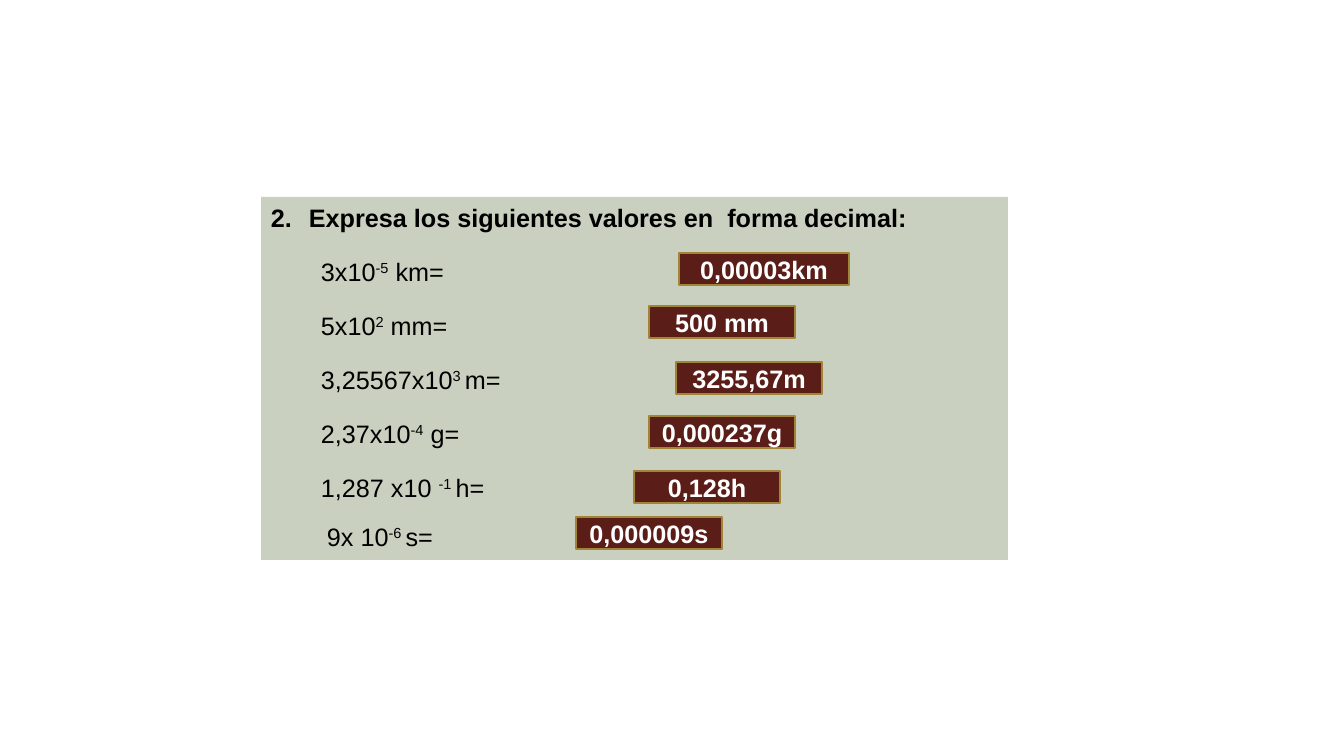
from dataclasses import dataclass

from lxml import etree
from pptx import Presentation
from pptx.dml.color import RGBColor
from pptx.enum.shapes import MSO_SHAPE
from pptx.enum.text import MSO_ANCHOR, PP_ALIGN
from pptx.oxml.ns import qn
from pptx.util import Emu, Pt

RECTANGLE = MSO_SHAPE.RECTANGLE
TOP, MIDDLE = MSO_ANCHOR.TOP, MSO_ANCHOR.MIDDLE
JUSTIFY, LEFT, CENTER = PP_ALIGN.JUSTIFY, PP_ALIGN.LEFT, PP_ALIGN.CENTER

# Content
QUESTION_NUMBER = 2
QUESTION = "Expresa los siguientes valores en  forma decimal:"
# (base, exponent, unit)
EXERCISES = [
    ("3x10", "-5", " km="),
    ("5x10", "2", " mm="),
    ("3,25567x10", "3 ", "m="),
    ("2,37x10", "-4", " g="),
    ("1,287 x10 ", "-1 ", "h="),
    ("9x 10", "-6 ", "s="),
]
# (answer, left, top, width) in px
ANSWERS = [
    ("0,00003km", 679, 253, 170),
    ("500 mm", 649, 306, 146),
    ("3255,67m", 676, 362, 146),
    ("0,000237g", 649, 416, 146),
    ("0,128h", 634, 471, 146),
    ("0,000009s", 576, 517, 146),
]

# Layout in px
SLIDE_SIZE = (1344, 756)
PANEL = (261, 197, 747, 363)
ANSWER_HEIGHT = 32
QUESTION_INDENT = 38
EXERCISE_INDENT = 50
LAST_INDENT = 56


@dataclass(frozen=True)
class Theme:
    font: str = "Arial"
    size: Pt = Pt(18)
    panel: RGBColor = RGBColor(0xCA, 0xD0, 0xC0)
    ink: RGBColor = RGBColor(0, 0, 0)
    answer: RGBColor = RGBColor(0x5A, 0x1D, 0x18)
    answer_line: RGBColor = RGBColor(0xA1, 0x84, 0x35)
    answer_ink: RGBColor = RGBColor(0xFF, 0xFF, 0xFF)


THEME = Theme()


def px(length):
    return Emu(round(length * 914400 / 100.8))


def add_rectangle(slide, box, fill, anchor):
    rectangle = slide.shapes.add_shape(RECTANGLE, *map(px, box))
    rectangle.shadow.inherit = False
    rectangle.fill.solid()
    rectangle.fill.fore_color.rgb = fill
    rectangle.text_frame.word_wrap = True
    rectangle.text_frame.vertical_anchor = anchor
    return rectangle


def style_run(run, color, bold):
    run.font.name = THEME.font
    run.font.size = THEME.size
    run.font.bold = bold
    run.font.color.rgb = color


def indent(paragraph, margin, first_line=0):
    properties = paragraph._p.get_or_add_pPr()
    properties.set("marL", str(px(margin)))
    properties.set("indent", str(px(first_line)))
    return properties


def write_question(paragraph):
    paragraph.text = QUESTION
    properties = indent(paragraph, QUESTION_INDENT, -QUESTION_INDENT)
    etree.SubElement(properties, qn("a:buFont"), typeface=THEME.font)
    etree.SubElement(properties, qn("a:buAutoNum"), type="arabicPeriod",
                     startAt=str(QUESTION_NUMBER))
    paragraph.alignment = JUSTIFY
    paragraph.space_after = Pt(12)
    style_run(paragraph.runs[0], THEME.ink, True)


def write_exercise(paragraph, exercise, is_last):
    for position, part in enumerate(exercise):
        run = paragraph.add_run()
        run.text = part
        style_run(run, THEME.ink, False)
        if position == 1:
            run._r.get_or_add_rPr().set("baseline", "30000")
    indent(paragraph, LAST_INDENT if is_last else EXERCISE_INDENT)
    paragraph.alignment = LEFT if is_last else JUSTIFY
    paragraph.space_before = Pt(0 if is_last else 5)
    paragraph.space_after = Pt(8 if is_last else 12)
    if is_last:
        paragraph.line_spacing = 1.07


def add_exercise_panel(slide):
    panel = add_rectangle(slide, PANEL, THEME.panel, TOP)
    panel.line.fill.background()
    frame = panel.text_frame
    write_question(frame.paragraphs[0])
    for exercise in EXERCISES:
        write_exercise(frame.add_paragraph(), exercise, exercise is EXERCISES[-1])


def add_answer(slide, answer, left, top, width):
    label = add_rectangle(slide, (left, top, width, ANSWER_HEIGHT), THEME.answer, MIDDLE)
    label.line.color.rgb = THEME.answer_line
    label.line.width = Pt(1.25)
    paragraph = label.text_frame.paragraphs[0]
    paragraph.text = answer
    paragraph.alignment = CENTER
    style_run(paragraph.runs[0], THEME.answer_ink, True)


def main():
    presentation = Presentation()
    presentation.slide_width, presentation.slide_height = map(px, SLIDE_SIZE)
    slide = presentation.slides.add_slide(presentation.slide_layouts[6])
    add_exercise_panel(slide)
    for answer in ANSWERS:
        add_answer(slide, *answer)
    presentation.save("out.pptx")


if __name__ == "__main__":
    main()
